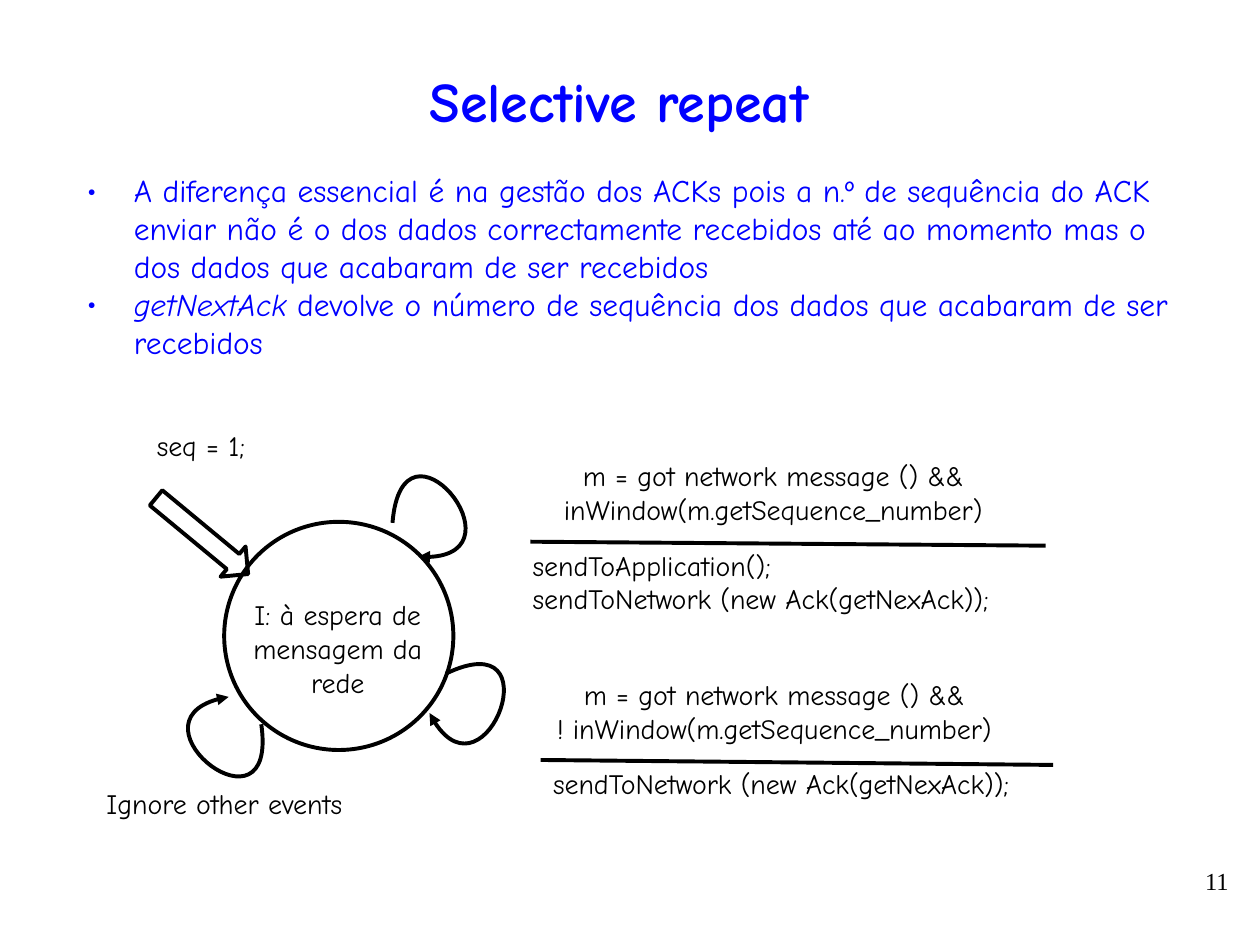
from lxml.etree import SubElement
from pptx import Presentation
from pptx.dml.color import RGBColor
from pptx.enum.shapes import MSO_CONNECTOR, MSO_SHAPE
from pptx.enum.text import MSO_ANCHOR, MSO_AUTO_SIZE, PP_ALIGN
from pptx.oxml.ns import qn
from pptx.util import Cm, Pt

FONT = "Comic Neue"
BLUE, BLACK = "0000FF", "000000"
LEFT, MID, RIGHT = PP_ALIGN.LEFT, PP_ALIGN.CENTER, PP_ALIGN.RIGHT
# Start, two control points and end of a loop, before it is turned
LOOP = ((1.86, 2.6), (0, 4.17), (0.43, 0), (1.98, 1.75))


def color(code):
    return RGBColor.from_string(code)


def style(frame, size, code=BLACK, align=LEFT, font=FONT, bold=False):
    for para in frame.paragraphs:
        para.alignment = align
        for run in para.runs:
            run.font.name = font
            run.font.size = Pt(size)
            run.font.bold = bold
            run.font.color.rgb = color(code)


def place(shape, box):
    shape.left, shape.top, shape.width, shape.height = map(Cm, box)


def add_title(slide, text, box):
    title = slide.shapes.title
    place(title, box)
    title.text_frame.text = text
    title.text_frame.vertical_anchor = MSO_ANCHOR.MIDDLE
    style(title.text_frame, 32, BLUE, MID, bold=True)


def add_frame(slide, box, wrap=True):
    frame = slide.shapes.add_textbox(*map(Cm, box)).text_frame
    frame.word_wrap = wrap
    frame.auto_size = MSO_AUTO_SIZE.SHAPE_TO_FIT_TEXT
    return frame


def add_text(slide, text, box, align=LEFT, wrap=True, size=16, font=FONT):
    frame = add_frame(slide, box, wrap)
    frame.text = text
    style(frame, size, align=align, font=font)


def add_bullets(slide, items, box):
    """Each item is a pair: an italic lead and the plain rest."""
    frame = add_frame(slide, box)
    for i, (lead, rest) in enumerate(items):
        para = frame.add_paragraph() if i else frame.paragraphs[0]
        if lead:
            run = para.add_run()
            run.text = lead
            run.font.italic = True
        para.add_run().text = rest
        props = para._p.get_or_add_pPr()
        props.set("marL", str(Cm(0.95)))
        props.set("indent", str(-Cm(0.95)))
        SubElement(props, qn("a:buFont"), typeface=FONT)
        SubElement(props, qn("a:buChar"), char="•")
    style(frame, 18, BLUE)


def ink(shape):
    shape.line.color.rgb = color(BLACK)
    shape.line.width = Pt(2.25)


def outline(shape, turn=0):
    shape.rotation = turn
    shape.shadow.inherit = False
    shape.fill.background()
    ink(shape)


def add_shape(slide, kind, box, turn=0):
    outline(slide.shapes.add_shape(kind, *map(Cm, box)), turn)


def add_rule(slide, start, end):
    rule = slide.shapes.add_connector(
        MSO_CONNECTOR.STRAIGHT, *map(Cm, start + end))
    ink(rule)
    SubElement(rule._element.spPr, qn("a:effectLst"))


def add_loop(slide, left, top, turn):
    dots = [(Cm(left + x), Cm(top + y)) for x, y in LOOP]
    build = slide.shapes.build_freeform(*dots[0])
    build.add_line_segments(dots[1:], close=False)
    loop = build.convert_to_shape()
    outline(loop, turn)
    # Join the three segments into one cubic curve
    lines = list(loop._element.iter(qn("a:lnTo")))
    cubic = SubElement(lines[0].getparent(), qn("a:cubicBezTo"))
    for line in lines:
        cubic.append(line[0])
        line.getparent().remove(line)
    SubElement(loop.line._get_or_add_ln(), qn("a:tailEnd"), type="triangle")


def main():
    deck = Presentation()
    deck.slide_width, deck.slide_height = Cm(25.4), Cm(19.05)
    slide = deck.slides.add_slide(deck.slide_layouts[5])

    # Title and explanation
    add_title(slide, "Selective repeat", (0.84, 1.07, 23.29, 1.9))
    add_bullets(slide, [
        ("", "A diferença essencial é na gestão dos ACKs pois a n.º de "
             "sequência do ACK enviar não é o dos dados correctamente "
             "recebidos até ao momento mas o dos dados que acabaram de "
             "ser recebidos"),
        ("getNextAck", " devolve o número de sequência dos dados que "
                       "acabaram de ser recebidos"),
    ], (1.5, 3.33, 22.81, 4.11))

    # State and its entry arrow
    add_shape(slide, MSO_SHAPE.OVAL, (4.52, 10.52, 4.62, 4.6))
    add_text(slide, "I: à espera de mensagem da rede",
             (4.7, 11.93, 4.22, 2.31), MID)
    add_shape(slide, MSO_SHAPE.RIGHT_ARROW, (2.87, 10.41, 2.41, 0.79), 39.6)
    add_text(slide, "seq = 1;", (2.82, 8.52, 2.46, 0.94), MID, False)

    # Loops back to the state
    add_loop(slide, 7.9, 8.2, 134.8)
    add_loop(slide, 8.71, 12.21, 194.4)
    add_loop(slide, 3.38, 12.98, 302)

    # Event above each rule, actions below it
    event = "m = got network message () &&\n"
    test = "inWindow(m.getSequence_number)"
    reply = "sendToNetwork (new Ack(getNexAck));"
    add_text(slide, event + test, (10.69, 9.12, 9.8, 1.63), MID, False)
    add_rule(slide, (10.69, 10.92), (21.08, 11))
    add_text(slide, "sendToApplication();\n" + reply,
             (10.49, 10.93, 12.19, 1.63))
    add_text(slide, event + "! " + test,
             (10.57, 13.54, 10.08, 1.63), MID, False)
    add_rule(slide, (10.9, 15.32), (21.23, 15.42))
    add_text(slide, reply, (10.9, 15.32, 12.19, 0.94))
    add_text(slide, "Ignore other events", (1.5, 15.73, 6.05, 0.94),
             MID, False)

    # Page number
    add_text(slide, "11", (19.1, 17.33, 5.92, 1.32), RIGHT,
             size=14, font="Times New Roman")

    deck.save("out.pptx")


if __name__ == "__main__":
    main()
